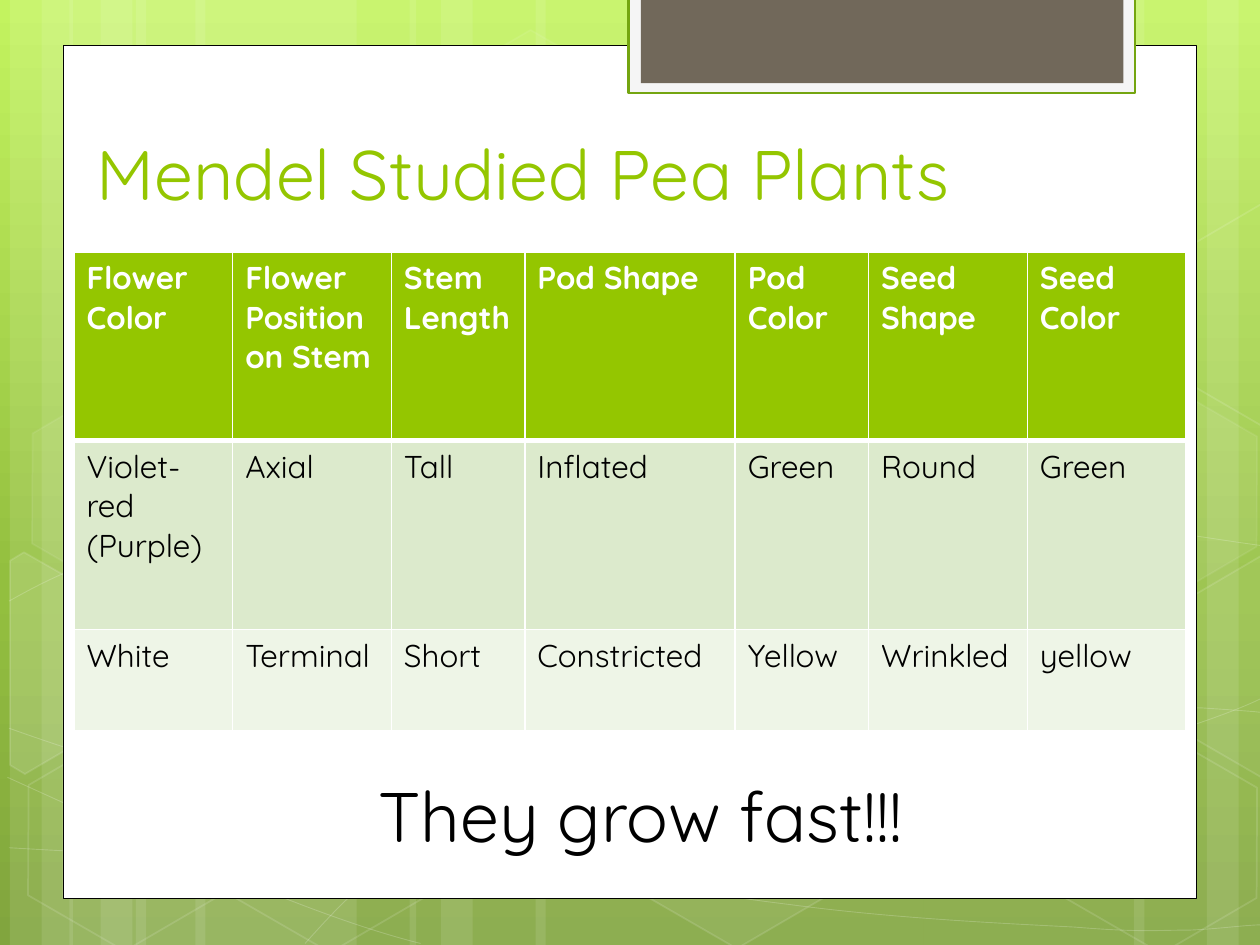
import copy
import math
from typing import NamedTuple, Optional

from lxml import etree
from pptx import Presentation
from pptx.dml.color import RGBColor
from pptx.enum import shapes, text
from pptx.oxml.ns import qn
from pptx.util import Cm, Pt

FONT = "Quicksand"
WHITE, BLACK, GREEN = "FFFFFF", "000000", "94C600"
TILT = 30


class Box(NamedTuple):
    left: float
    top: float
    width: float
    height: float


class Paint(NamedTuple):
    color: str
    alpha: int = 100
    weight: float = 0


class Hexagon(NamedTuple):
    left: float
    top: float
    fill_alpha: int
    line_alpha: int


class CutHexagon(NamedTuple):
    center: tuple
    corners: list
    fill_alpha: int


STRIPES = [
    (2.74, 4.45), (0.2, 1.27), (0.84, 2.11), (3.94, 4.45), (1.4, 1.27), (2.03, 2.11),
    (18.62, 4.45), (24.33, 1.27), (22.86, 2.11), (10.8, 7.82), (8.26, 1.27), (8.89, 2.11),
]
# Each curve is a start point followed by three points per Bézier segment.
CURVES = [
    [(0.18, 17.09), (1.55, 17.17), (2.92, 17.25), (4.83, 17.22), (6.73, 17.2),
     (9.09, 17.15), (11.63, 16.89), (14.17, 16.64), (17.78, 16.15), (20.12, 15.67),
     (22.43, 15.19), (24.82, 14.43), (25.58, 14)],
    [(0.18, 12.12), (0.91, 11.71), (1.65, 11.33), (3.07, 10.95), (4.52, 10.57),
     (6.58, 10.01), (8.81, 9.83), (11.07, 9.65), (13.82, 9.63), (16.61, 9.83),
     (19.41, 10.03), (24.05, 10.82), (25.58, 11.02)],
    [(0.15, 15.67), (3.23, 17.07), (6.27, 18.47), (8.48, 19.02)],
    [(0.18, 14.68), (0.97, 14.96), (1.78, 15.24), (3.25, 15.65), (4.72, 16.03),
     (6.93, 16.66), (9.07, 17.09), (11.18, 17.53), (13.84, 17.98), (15.95, 18.24),
     (18.06, 18.52), (20.32, 18.62), (21.67, 18.69), (22.99, 18.8), (23.34, 18.75),
     (24, 18.75), (24.66, 18.72), (25.12, 18.64), (25.58, 18.64)],
    [(6.15, 19.02), (6.6, 18.52), (7.06, 18.01), (7.67, 17.55), (8.28, 17.09),
     (9.14, 16.59), (9.86, 16.23), (10.57, 15.88), (11, 15.72), (11.94, 15.47),
     (12.85, 15.22), (14.55, 14.86), (15.44, 14.68), (16.36, 14.5), (16.48, 14.5),
     (17.27, 14.45), (18.06, 14.38), (19.3, 14.3), (20.17, 14.27), (21.06, 14.25),
     (22.5, 14.27), (22.5, 14.27), (23.07, 14.27), (23.64, 14.27), (24.21, 14.27),
     (24.66, 14.3), (25.1, 14.33), (25.32, 14.35), (25.55, 14.38), (25.48, 14.35),
     (25.55, 14.38)],
]
HEXAGONS = [
    Hexagon(8.48, 0.91, 4, 8), Hexagon(12.62, 14.96, 6, 12), Hexagon(0.28, 15.01, 0, 12),
    Hexagon(0.36, 7.92, 7, 8), Hexagon(4.42, 15.04, 0, 12), Hexagon(19.13, 11.51, 10, 12),
    Hexagon(21.18, 15.06, 0, 12), Hexagon(21.18, 7.98, 7, 8),
]
# Corners are measured from the center, after the tilt.
RIGHT_CORNERS = [(-1.5, -0.89), (0.41, -2.01), (0.61, -1.88), (0.61, 2.36),
                 (0.43, 2.46), (-1.5, 1.34)]
CUT_HEXAGONS = [
    CutHexagon((0.91, 13.59), [(-0.71, -2.29), (-0.43, -2.46), (1.52, -1.35),
                               (1.5, 0.89), (-0.41, 2.01), (-0.71, 1.83)], 10),
    CutHexagon((25.02, 13.21), RIGHT_CORNERS, 4),
    CutHexagon((25.02, 6.12), RIGHT_CORNERS, 0),
]

TRAITS = [
    ["Flower Color", "Flower Position on Stem", "Stem Length", "Pod Shape",
     "Pod Color", "Seed Shape", "Seed Color"],
    ["Violet-red (Purple)", "Axial", "Tall", "Inflated", "Green", "Round", "Green"],
    ["White", "Terminal", "Short", "Constricted", "Yellow", "Wrinkled", "yellow"],
]
COLUMN_WIDTHS = [3.2, 3.2, 2.69, 4.24, 2.69, 3.2, 3.2]
ROW_HEIGHTS = [3.8, 3.81, 2.05]
ROW_FILLS = [GREEN, "DCEACC", "EEF5E7"]


def rgb(color: str) -> RGBColor:
    return RGBColor.from_string(color)


def paint_fill(fill, paint: Paint) -> None:
    fill.solid()
    fill.fore_color.rgb = rgb(paint.color)
    if paint.alpha < 100:
        color = fill._xPr.find(qn("a:solidFill"))[0]
        etree.SubElement(color, qn("a:alpha"), val=str(paint.alpha * 1000))


def style(shape, fill: Optional[Paint] = None, line: Optional[Paint] = None) -> None:
    """Leave out a missing or fully transparent fill, and a missing line."""
    shape.shadow.inherit = False
    if fill and fill.alpha:
        paint_fill(shape.fill, fill)
    else:
        shape.fill.background()
    if line:
        paint_fill(shape.line.fill, line)
        shape.line.width = Pt(line.weight)
    else:
        shape.line.fill.background()


def add_preset(slide, kind, box: Box, fill=None, line=None):
    shape = slide.shapes.add_shape(kind, *map(Cm, box))
    style(shape, fill, line)
    return shape


def add_outline(slide, points, closed: bool, fill=None, line=None):
    start, *rest = [(Cm(x), Cm(y)) for x, y in points]
    builder = slide.shapes.build_freeform(*start)
    builder.add_line_segments(rest, close=closed)
    shape = builder.convert_to_shape()
    style(shape, fill, line)
    return shape


def add_curve(slide, points, line: Paint) -> None:
    """Turn every three straight segments into one cubic Bézier segment."""
    outline = add_outline(slide, points, False, line=line)
    route = outline._element.find(".//" + qn("a:path"))
    segments = route.findall(qn("a:lnTo"))
    for i in range(0, len(segments), 3):
        bezier = etree.SubElement(route, qn("a:cubicBezTo"))
        for segment in segments[i:i + 3]:
            bezier.append(segment[0])
            route.remove(segment)


def add_cut_hexagon(slide, item: CutHexagon) -> None:
    cos, sin = math.cos(math.radians(TILT)), math.sin(math.radians(TILT))
    x, y = item.center
    upright = [(x + dx * cos + dy * sin, y - dx * sin + dy * cos) for dx, dy in item.corners]
    outline = add_outline(slide, upright, True, Paint(WHITE, item.fill_alpha),
                          Paint(WHITE, 12, 1))
    outline.rotation = TILT


def add_text(slide, box: Box, words: str, **form) -> None:
    write(slide.shapes.add_textbox(*map(Cm, box)).text_frame, words, **form)


def write(frame, words: str, *, size: float, color: str, bold: bool = False,
          align=text.PP_ALIGN.LEFT, anchor=text.MSO_ANCHOR.TOP) -> None:
    frame.word_wrap = True
    frame.vertical_anchor = anchor
    paragraph = frame.paragraphs[0]
    paragraph.alignment = align
    run = paragraph.add_run()
    run.text = words
    run.font.name, run.font.size, run.font.bold = FONT, Pt(size), bold
    run.font.color.rgb = rgb(color)


def set_borders(cell, **weights: float) -> None:
    properties = cell._tc.get_or_add_tcPr()
    for index, side in enumerate("LRTB"):
        border = etree.Element(qn(f"a:ln{side}"), w=str(Pt(weights.get(side, 1))))
        fill = etree.SubElement(border, qn("a:solidFill"))
        etree.SubElement(fill, qn("a:srgbClr"), val=WHITE)
        properties.insert(index, border)


def paint_background(slide) -> None:
    fill = slide.background.fill
    fill.gradient()
    fill.gradient_angle = 270
    stop_list = slide.element.find(".//" + qn("a:gsLst"))
    stop_list.append(copy.deepcopy(stop_list[-1]))
    stops = [(0, "C3F35F"), (0.62, "93BF3F"), (1, "81A53E")]
    for stop, (position, color) in zip(fill.gradient_stops, stops):
        stop.position = position
        stop.color.rgb = rgb(color)


def add_backdrop(slide) -> None:
    preset = shapes.MSO_SHAPE
    for left, width in STRIPES:
        add_preset(slide, preset.RECTANGLE, Box(left, 0, width, 19.05), Paint(WHITE, 10))
    for curve in CURVES:
        add_curve(slide, curve, Paint(WHITE, 20, 0.5))
    for item in HEXAGONS:
        hexagon = add_preset(slide, preset.HEXAGON, Box(item.left, item.top, 4.45, 3.86),
                             Paint(WHITE, item.fill_alpha), Paint(WHITE, item.line_alpha, 1))
        hexagon.adjustments[0] = 0.285
        hexagon.rotation = TILT
    for cut in CUT_HEXAGONS:
        add_cut_hexagon(slide, cut)
    for box, fill, line in (
        (Box(1.27, 0.91, 22.86, 17.2), WHITE, Paint(BLACK, weight=0.5)),
        (Box(12.67, -0.05, 10.21, 1.93), "F5F5F5", Paint("74A510", weight=1.25)),
        (Box(12.92, -0.05, 9.73, 1.73), "71685A", None),
    ):
        add_preset(slide, preset.RECTANGLE, box, Paint(fill), line)


def add_trait_table(slide) -> None:
    box = Box(1.49, 5.08, sum(COLUMN_WIDTHS), sum(ROW_HEIGHTS))
    table = slide.shapes.add_table(len(TRAITS), len(COLUMN_WIDTHS), *map(Cm, box)).table
    for column, width in zip(table.columns, COLUMN_WIDTHS):
        column.width = Cm(width)
    for r, (row, height) in enumerate(zip(TRAITS, ROW_HEIGHTS)):
        table.rows[r].height = Cm(height)
        header = r == 0
        for c, words in enumerate(row):
            cell = table.cell(r, c)
            paint_fill(cell.fill, Paint(ROW_FILLS[r]))
            set_borders(cell, T=3 if r == 1 else 1, B=3 if header else 1)
            write(cell.text_frame, words, size=18, bold=header,
                  color=WHITE if header else BLACK)


def main() -> None:
    deck = Presentation()
    deck.slide_width, deck.slide_height = Cm(25.4), Cm(19.05)
    slide = deck.slides.add_slide(deck.slide_layouts[6])
    paint_background(slide)
    add_backdrop(slide)
    add_text(slide, Box(1.7, 1.27, 19.51, 3.18), "Mendel Studied Pea Plants",
             size=40, color=GREEN, anchor=text.MSO_ANCHOR.BOTTOM)
    add_trait_table(slide)
    add_text(slide, Box(2.33, 15.44, 21.16, 1.96), "They grow fast!!!",
             size=40, color=BLACK, align=text.PP_ALIGN.CENTER)
    deck.save("out.pptx")


if __name__ == "__main__":
    main()
